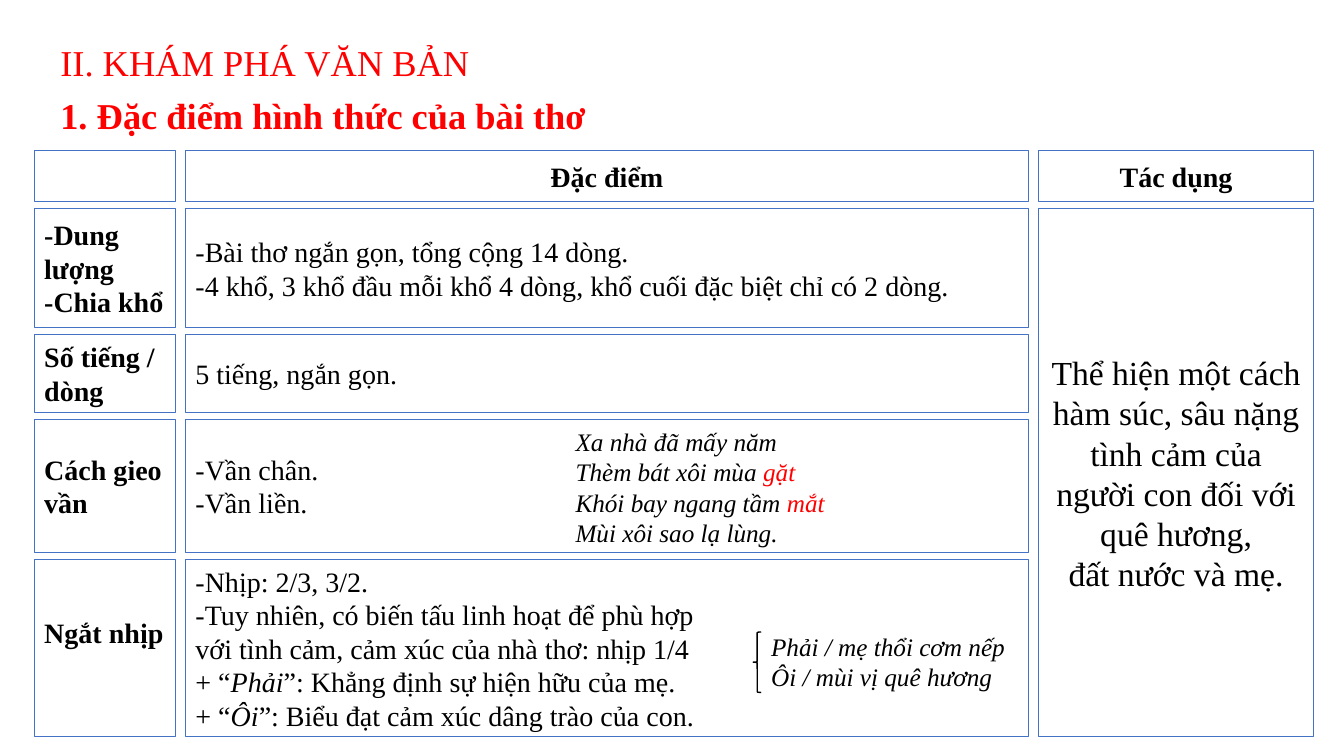
"""Builds the slide on the form of the poem: a grid of features and their effect."""
from pptx import Presentation
from pptx.dml.color import RGBColor
from pptx.enum.shapes import MSO_SHAPE as Shape
from pptx.enum.text import MSO_ANCHOR as Anchor, PP_ALIGN as Align
from pptx.util import Inches, Pt

RED = RGBColor(0xFF, 0x00, 0x00)
BLACK = RGBColor(0x00, 0x00, 0x00)
BLUE = RGBColor(0x44, 0x72, 0xC4)

LEFT, TOP = 0.34, 1.49
COLUMN_GAP, ROW_GAP = 0.1, 0.07
COLUMN_WIDTHS = [1.4, 8.36, 2.73]
ROW_HEIGHTS = [0.51, 1.18, 0.77, 1.32, 1.76]
COLUMN_LEFTS = [LEFT + sum(COLUMN_WIDTHS[:i]) + i * COLUMN_GAP for i in range(3)]
ROW_TOPS = [TOP + sum(ROW_HEIGHTS[:i]) + i * ROW_GAP for i in range(5)]

deck = Presentation()
deck.slide_width, deck.slide_height = Inches(13.33), Inches(7.5)
slide = deck.slides.add_slide(deck.slide_layouts[6])


def write(holder, lines, size=20, align=Align.LEFT, color=BLACK, accent=None, **style):
    """Writes the lines; every second part between bars takes the accent."""
    frame = holder.text_frame
    frame.word_wrap = True
    frame.vertical_anchor = Anchor.MIDDLE
    for number, line in enumerate(lines):
        paragraph = frame.paragraphs[0] if number == 0 else frame.add_paragraph()
        paragraph.alignment = align
        for part, words in enumerate(line.split("|")):
            run = paragraph.add_run()
            run.text = words
            look = {"name": "Times New Roman", "size": Pt(size), "color": color, **style}
            if part % 2:
                look.update(accent)
            run.font.color.rgb = look.pop("color")
            for key, value in look.items():
                setattr(run.font, key, value)
    return frame


def outline(kind, color, *box):
    """Adds an unfilled shape with a thin line."""
    shape = slide.shapes.add_shape(kind, *map(Inches, box))
    shape.shadow.inherit = False
    shape.fill.background()
    shape.line.color.rgb = color
    shape.line.width = Pt(1)
    return shape


heading = slide.shapes.add_textbox(*map(Inches, (0.5, 0.4, 12.36, 1)))
heading_frame = write(heading, ["II. KHÁM PHÁ VĂN BẢN", "|1. Đặc điểm hình thức của bài thơ"],
                      size=26, align=Align.JUSTIFY, color=RED, accent={"bold": True})
heading_frame.vertical_anchor = Anchor.TOP
for paragraph in heading_frame.paragraphs:
    paragraph.line_spacing = 0.9
    paragraph.space_before = Pt(10)

header = {"bold": True, "align": Align.CENTER}
label = {"bold": True}
feature = {"accent": {"italic": True}}
effect = {"size": 24, "align": Align.CENTER}

cells = [
    (0, 0, 1, [], header),
    (0, 1, 1, ["Đặc điểm"], header),
    (0, 2, 1, ["Tác dụng"], header),
    (1, 0, 1, ["-Dung lượng", "-Chia khổ"], label),
    (1, 1, 1, ["-Bài thơ ngắn gọn, tổng cộng 14 dòng.",
               "-4 khổ, 3 khổ đầu mỗi khổ 4 dòng, khổ cuối đặc biệt chỉ có 2 dòng."], feature),
    (1, 2, 4, ["Thể hiện một cách", "hàm súc, sâu nặng",
               "tình cảm của người con đối với quê hương,", "đất nước và mẹ."], effect),
    (2, 0, 1, ["Số tiếng / dòng"], label),
    (2, 1, 1, ["5 tiếng, ngắn gọn."], feature),
    (3, 0, 1, ["Cách gieo vần"], label),
    (3, 1, 1, ["-Vần chân.", "-Vần liền."], feature),
    (4, 0, 1, ["Ngắt nhịp"], label),
    (4, 1, 1, ["-Nhịp: 2/3, 3/2.",
               "-Tuy nhiên, có biến tấu linh hoạt để phù hợp",
               "với tình cảm, cảm xúc của nhà thơ: nhịp 1/4",
               "+ “|Phải|”: Khẳng định sự hiện hữu của mẹ.",
               "+ “|Ôi|”: Biểu đạt cảm xúc dâng trào của con."], feature),
]
for row, column, span, lines, style in cells:
    height = sum(ROW_HEIGHTS[row:row + span]) + (span - 1) * ROW_GAP
    cell = outline(Shape.RECTANGLE, BLUE, COLUMN_LEFTS[column], ROW_TOPS[row],
                   COLUMN_WIDTHS[column], height)
    cell_frame = write(cell, lines, **style)
    if lines == ["Ngắt nhịp"]:
        cell_frame.margin_bottom = Inches(0.36)

stanza = slide.shapes.add_textbox(*map(Inches, (5.61, 4.22, 3.06, 1.22)))
write(stanza, ["Xa nhà đã mấy năm", "Thèm bát xôi mùa |gặt", "Khói bay ngang tầm |mắt",
               "Mùi xôi sao lạ lùng."],
      size=18, align=Align.JUSTIFY, italic=True, accent={"color": RED})

rhythm = slide.shapes.add_textbox(*map(Inches, (7.55, 6.02, 2.53, 1.09)))
write(rhythm, ["Phải / mẹ thổi cơm nếp", "Ôi / mùi vị quê hương"], size=18, italic=True)
outline(Shape.LEFT_BRACE, BLACK, 7.47, 6.27, 0.08, 0.6)

deck.save("out.pptx")
